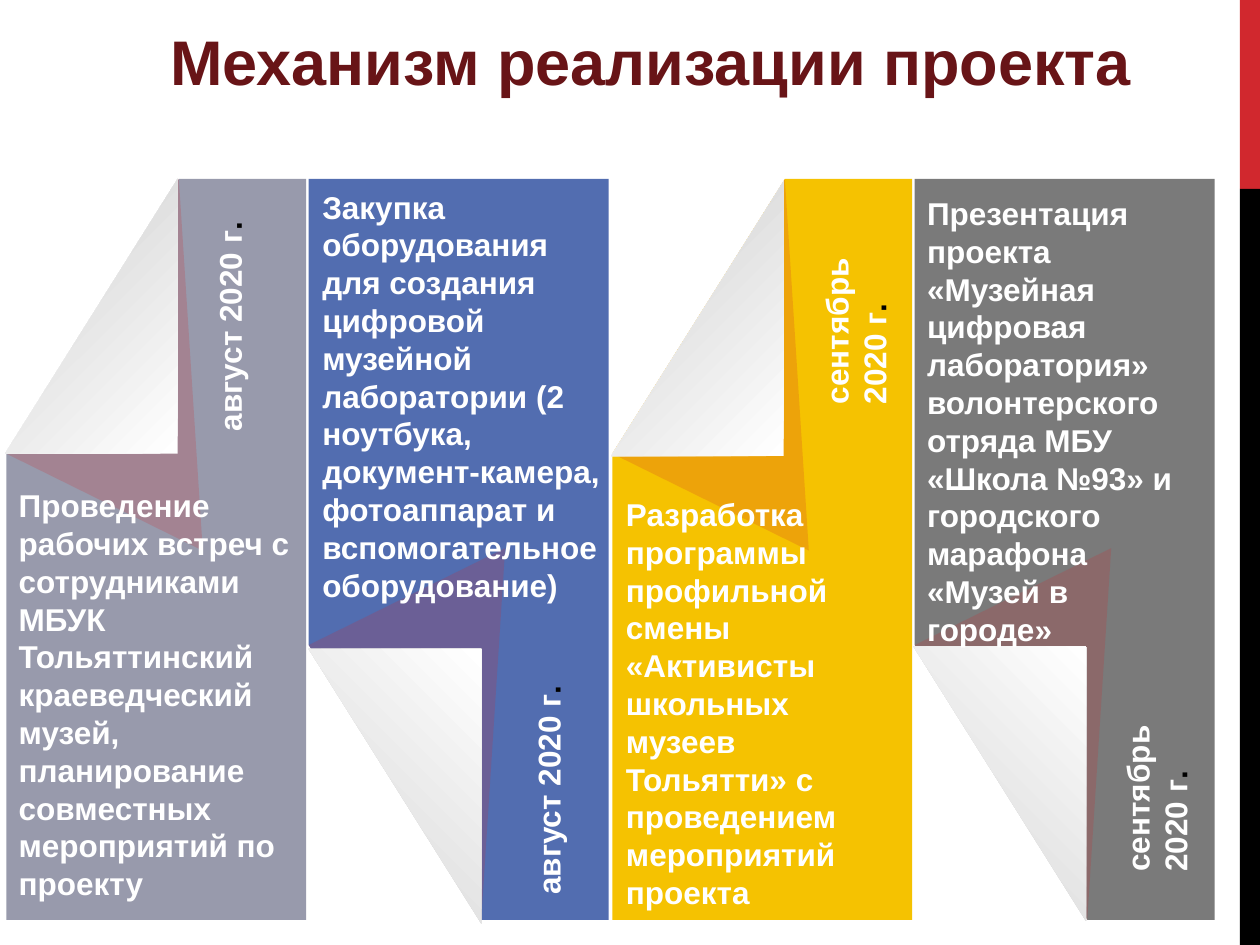
from lxml.etree import SubElement
from pptx import Presentation
from pptx.dml.color import RGBColor
from pptx.enum.shapes import MSO_SHAPE
from pptx.enum.text import MSO_AUTO_SIZE, PP_ALIGN
from pptx.oxml.ns import qn
from pptx.util import Inches, Pt

THEME = dict(
    font="Arial", head=36, body=18, title="681417", edge="F90009",
    red="D1282E", black="000000", white="FFFFFF", grey="D9D9D9",
)
TITLE = "Механизм реализации проекта"
BARS = [(0, 1.5, "red"), (1.5, 6, "black")]
PANELS = [
    dict(left=0.05, color="989AAC", nudge=(-0.01, 0), box=(0.05, 3.81, 2.38, 3.43),
         text="Проведение рабочих встреч с сотрудниками МБУК Тольяттинский "
              "краеведческий музей, планирование совместных мероприятий по проекту",
         date=["август 2020 г"], tag=(0.79, 2.29, 2.06, 0.4)),
    dict(left=2.45, color="526DB0", nudge=(0, 0.03), box=(2.46, 1.44, 2.4, 3.43),
         text="Закупка оборудования для создания цифровой музейной лаборатории "
              "(2 ноутбука, документ-камера, фотоаппарат и вспомогательное оборудование)",
         date=["август 2020 г"], tag=(3.32, 5.97, 2.06, 0.4)),
    dict(left=4.86, color="F5C201", nudge=(-0.01, 0.02), box=(4.87, 3.88, 2.27, 3.43),
         text="Разработка программы профильной смены «Активисты школьных музеев "
              "Тольятти» с проведением мероприятий проекта",
         date=["сентябрь", "2020 г"], tag=(6.01, 2.17, 1.56, 0.71)),
    dict(left=7.26, color="7A7A7A", nudge=(-0.01, 0.01), box=(7.26, 1.49, 2.27, 3.74),
         text="Презентация проекта «Музейная цифровая лаборатория» волонтерского "
              "отряда МБУ «Школа №93» и городского марафона «Музей в городе»",
         date=["сентябрь", "2020 г"], tag=(8.4, 5.88, 1.56, 0.71)),
]
TOP, BASE = 1.42, 7.3
WIDE, FOLD, CREASE = 2.38, 1.37, 3.6
SHEET = [(WIDE, BASE), (0, BASE), (0, CREASE), (FOLD, TOP), (WIDE, TOP)]
SHADE = [(FOLD, TOP), (0, CREASE), (1.56, 4.37)]
FLAP = [(0, CREASE), (FOLD, CREASE), (FOLD, TOP)]

deck = Presentation()
deck.slide_width, deck.slide_height = Inches(10), Inches(7.5)
slide = deck.slides.add_slide(deck.slide_layouts[6])
shapes = slide.shapes


def rgb(name):
    return RGBColor.from_string(THEME.get(name, name))


def paint(shape, color):
    shape.shadow.inherit = False
    shape.line.fill.background()
    shape.fill.solid()
    shape.fill.fore_color.rgb = rgb(color)


def draw(points, panel, flip, color, nudge=(0, 0)):
    spots = [
        (Inches(panel["left"] + x + nudge[0]),
         Inches((TOP + BASE - y if flip else y) + nudge[1]))
        for x, y in points
    ]
    pen = shapes.build_freeform(*spots[0])
    pen.add_line_segments(spots[1:], close=True)
    shape = pen.convert_to_shape()
    paint(shape, color)
    return shape


def style(run, size, color):
    font = run.font
    font.name, font.size, font.bold = THEME["font"], Pt(THEME[size]), True
    font.color.rgb = rgb(color)


def write(box, lines, size="body", color="white", wrap=True):
    shape = shapes.add_textbox(*map(Inches, box))
    frame = shape.text_frame
    frame.word_wrap = wrap
    frame.auto_size = MSO_AUTO_SIZE.SHAPE_TO_FIT_TEXT
    frame.text = "\n".join(lines)
    for para in frame.paragraphs:
        for run in para.runs:
            style(run, size, color)
    return shape


for top, tall, color in BARS:
    bar = shapes.add_shape(MSO_SHAPE.RECTANGLE, *map(Inches, (9.84, top, 0.16, tall)))
    paint(bar, color)

title = write((1.1, 0.13, 8.13, 0.71), [TITLE], "head", "title", False)
para = title.text_frame.paragraphs[0]
para.alignment = PP_ALIGN.CENTER
props = para.runs[0].font._element
line = SubElement(props, qn("a:ln"), w=str(Pt(1)))
fill = SubElement(line, qn("a:solidFill"))
SubElement(fill, qn("a:srgbClr"), val=THEME["edge"])
props.insert(0, line)

for i, panel in enumerate(PANELS):
    draw(SHEET, panel, i % 2, panel["color"])
    shade = draw(SHADE, panel, i % 2, "red")
    tone = shade._element.spPr.find(qn("a:solidFill"))[0]
    SubElement(tone, qn("a:alpha"), val="20000")

for i, panel in enumerate(PANELS):
    flip = i % 2
    flap = draw(FLAP, panel, flip, "white", panel["nudge"])
    flap.fill.gradient()
    flap.fill.gradient_angle = 45 if flip else 135
    stops = [(0.15, "grey"), (1, "white")] if flip else [(0, "white"), (0.75, "grey")]
    for stop, (place, color) in zip(flap.fill.gradient_stops, stops):
        stop.position = place
        stop.color.rgb = rgb(color)

for panel in PANELS:
    write(panel["box"], [panel["text"]])

for panel in PANELS:
    tag = write(panel["tag"], panel["date"], wrap=False)
    tag.rotation = 270
    dot = tag.text_frame.paragraphs[-1].add_run()
    dot.text = "."
    style(dot, "body", "black")

deck.save("out.pptx")
